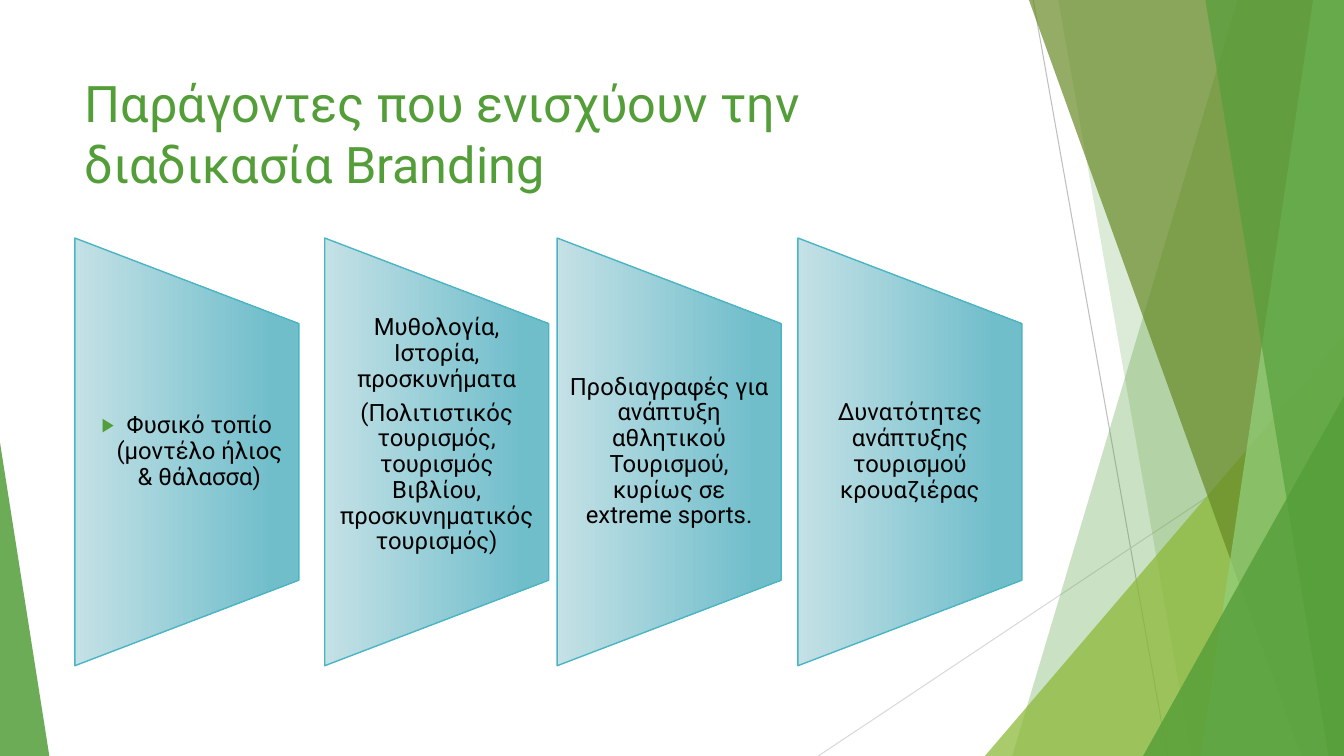
from dataclasses import dataclass

from lxml.etree import SubElement
from pptx import Presentation
from pptx.dml.color import RGBColor
from pptx.enum.shapes import MSO_CONNECTOR as Connector, MSO_SHAPE as Preset
from pptx.enum.text import MSO_ANCHOR as Anchor, MSO_AUTO_SIZE as AutoSize, PP_ALIGN as Align
from pptx.oxml.ns import qn
from pptx.shapes.autoshape import Shape
from pptx.slide import Slide
from pptx.text.text import _Paragraph as Paragraph
from pptx.util import Pt


@dataclass(frozen=True)
class Theme:
    font: str = "Roboto"
    title_size: float = 36
    card_size: float = 17
    green: str = "549E39"
    lime: str = "8AB833"
    olive: str = "678A26"
    mint: str = "93D07D"
    text: str = "000000"
    card_light: str = "C4E1E6"
    card_dark: str = "71BECB"
    card_line: str = "4AB5C4"
    ray_dark: str = "BFBFBF"
    ray_light: str = "D9D9D9"


@dataclass(frozen=True)
class Ray:
    start: tuple[float, float]
    end: tuple[float, float]
    color: str


@dataclass(frozen=True)
class Band:
    """Full-height facet reaching the right edge; its left side slants."""
    top_x: float
    bottom_x: float
    color: str
    opacity: int


@dataclass(frozen=True)
class Corner:
    """Triangle standing on the bottom edge; apex is 0 for left, 1 for right."""
    left: float
    top: float
    width: float
    apex: int
    color: str
    opacity: int


@dataclass(frozen=True)
class Card:
    left: float
    paragraphs: tuple[str, ...]
    bulleted: bool = False
    bottom_inset: float = 0


THEME = Theme()
PAGE_WIDTH, PAGE_HEIGHT = 960, 540
CARD_WIDTH, CARD_HEIGHT, CARD_MIDDLE = 160, 305.5, 322.75
TEXT_HEIGHT = 183.5
SIDE_INSET = 8
PARAGRAPH_GAP = 6
BULLET_INDENT = 18

RAYS = [
    Ray((738, 0), (834, PAGE_HEIGHT), THEME.ray_dark),
    Ray((PAGE_WIDTH, 290), (584.5, PAGE_HEIGHT), THEME.ray_light),
]
FACETS = [
    Band(884, 723, THEME.green, 30),
    Band(756, 851, THEME.green, 20),
    Corner(703.5, 240, 256.5, 1, THEME.lime, 72),
    Band(735, 929.5, THEME.olive, 70),
    Band(938, 858, THEME.mint, 70),
    Band(861, 949, THEME.green, 65),
    Corner(816.5, 283, 143.5, 1, THEME.green, 80),
    Corner(0, 316, 35.25, 0, THEME.green, 85),
]
CARDS = [
    Card(53.5, ("Φυσικό τοπίο (μοντέλο ήλιος & θάλασσα)",), bulleted=True),
    Card(232, (
        "Μυθολογία, Ιστορία, προσκυνήματα",
        "(Πολιτιστικός τουρισμός, τουρισμός Βιβλίου, προσκυνηματικός τουρισμός)",
    ), bottom_inset=24),
    Card(398, ("Προδιαγραφές για ανάπτυξη αθλητικού Τουρισμού, κυρίως σε extreme sports.",)),
    Card(570, ("Δυνατότητες ανάπτυξης τουρισμού κρουαζιέρας",)),
]


def rgb(color: str) -> RGBColor:
    return RGBColor.from_string(color)


def add_span(para: Paragraph, text: str, size: float, color: str) -> None:
    span = para.add_run()
    span.text = text
    span.font.name = THEME.font
    span.font.size = Pt(size)
    span.font.color.rgb = rgb(color)


def add_ray(page: Slide, ray: Ray) -> None:
    line = page.shapes.add_connector(
        Connector.STRAIGHT, *(Pt(value) for value in ray.start + ray.end))
    line.line.color.rgb = rgb(ray.color)
    line.line.width = Pt(0.75)
    SubElement(line.element.spPr, qn("a:effectLst"))


def band_shape(page: Slide, band: Band) -> Shape:
    outline = page.shapes.build_freeform(Pt(band.top_x), 0)
    corners = [(PAGE_WIDTH, 0), (PAGE_WIDTH, PAGE_HEIGHT), (band.bottom_x, PAGE_HEIGHT)]
    outline.add_line_segments([(Pt(x), Pt(y)) for x, y in corners], close=True)
    return outline.convert_to_shape()


def corner_shape(page: Slide, corner: Corner) -> Shape:
    triangle = page.shapes.add_shape(
        Preset.ISOSCELES_TRIANGLE, Pt(corner.left), Pt(corner.top),
        Pt(corner.width), Pt(PAGE_HEIGHT - corner.top))
    triangle.adjustments[0] = corner.apex
    return triangle


def add_facet(page: Slide, facet: Band | Corner) -> None:
    shape = band_shape(page, facet) if isinstance(facet, Band) else corner_shape(page, facet)
    shape.shadow.inherit = False
    shape.line.fill.background()
    shape.fill.solid()
    shape.fill.fore_color.rgb = rgb(facet.color)
    color = shape.element.spPr.find(".//" + qn("a:srgbClr"))
    SubElement(color, qn("a:alpha"), val=str(facet.opacity * 1000))


def add_bullet(para: Paragraph) -> None:
    properties = para._p.get_or_add_pPr()
    properties.set("marL", str(Pt(BULLET_INDENT)))
    properties.set("indent", str(-Pt(BULLET_INDENT)))
    color = SubElement(properties, qn("a:buClr"))
    SubElement(color, qn("a:srgbClr"), val=THEME.green)
    SubElement(properties, qn("a:buSzPct"), val="80000")
    SubElement(properties, qn("a:buFont"), typeface=THEME.font)
    SubElement(properties, qn("a:buChar"), char="▶")


def add_trapezoid(page: Slide, left: float) -> None:
    """Draw the card's panel: a quarter turn puts its wide side on the left."""
    panel = page.shapes.add_shape(
        Preset.FLOWCHART_MANUAL_OPERATION,
        Pt(left + (CARD_WIDTH - CARD_HEIGHT) / 2), Pt(CARD_MIDDLE - CARD_WIDTH / 2),
        Pt(CARD_HEIGHT), Pt(CARD_WIDTH))
    panel.rotation = 270
    panel.shadow.inherit = False
    panel.fill.gradient()
    panel.fill.gradient_angle = 270
    stops = ((0, THEME.card_light), (0.88, THEME.card_dark))
    for stop, (position, color) in zip(panel.fill.gradient_stops, stops):
        stop.position = position
        stop.color.rgb = rgb(color)
    panel.line.color.rgb = rgb(THEME.card_line)
    panel.line.width = Pt(1)


def add_card(page: Slide, card: Card) -> None:
    add_trapezoid(page, card.left)
    box = page.shapes.add_textbox(
        Pt(card.left), Pt(CARD_MIDDLE - TEXT_HEIGHT / 2), Pt(CARD_WIDTH), Pt(TEXT_HEIGHT))
    frame = box.text_frame
    frame.word_wrap = True
    frame.vertical_anchor = Anchor.MIDDLE
    frame.margin_left = frame.margin_right = Pt(SIDE_INSET)
    frame.margin_top, frame.margin_bottom = 0, Pt(card.bottom_inset)
    for index, text in enumerate(card.paragraphs):
        para = frame.add_paragraph() if index else frame.paragraphs[0]
        para.alignment = Align.CENTER
        para.line_spacing = 0.9
        para.space_after = Pt(PARAGRAPH_GAP)
        if card.bulleted:
            add_bullet(para)
        add_span(para, text, THEME.card_size, THEME.text)


def fill_title(page: Slide, text: str) -> None:
    title = page.shapes.title
    title.left, title.top, title.width, title.height = Pt(53.5), Pt(48), Pt(677), Pt(104)
    frame = title.text_frame
    frame.word_wrap = True
    frame.auto_size = AutoSize.NONE
    frame.vertical_anchor = Anchor.TOP
    para = frame.paragraphs[0]
    para.alignment = Align.LEFT
    add_span(para, text, THEME.title_size, THEME.green)


def main() -> None:
    deck = Presentation()
    deck.slide_width, deck.slide_height = Pt(PAGE_WIDTH), Pt(PAGE_HEIGHT)
    page = deck.slides.add_slide(deck.slide_layouts.get_by_name("Title Only"))
    for ray in RAYS:
        add_ray(page, ray)
    for facet in FACETS:
        add_facet(page, facet)
    for card in CARDS:
        add_card(page, card)
    fill_title(page, "Παράγοντες που ενισχύουν την διαδικασία Branding")
    deck.save("out.pptx")


if __name__ == "__main__":
    main()
